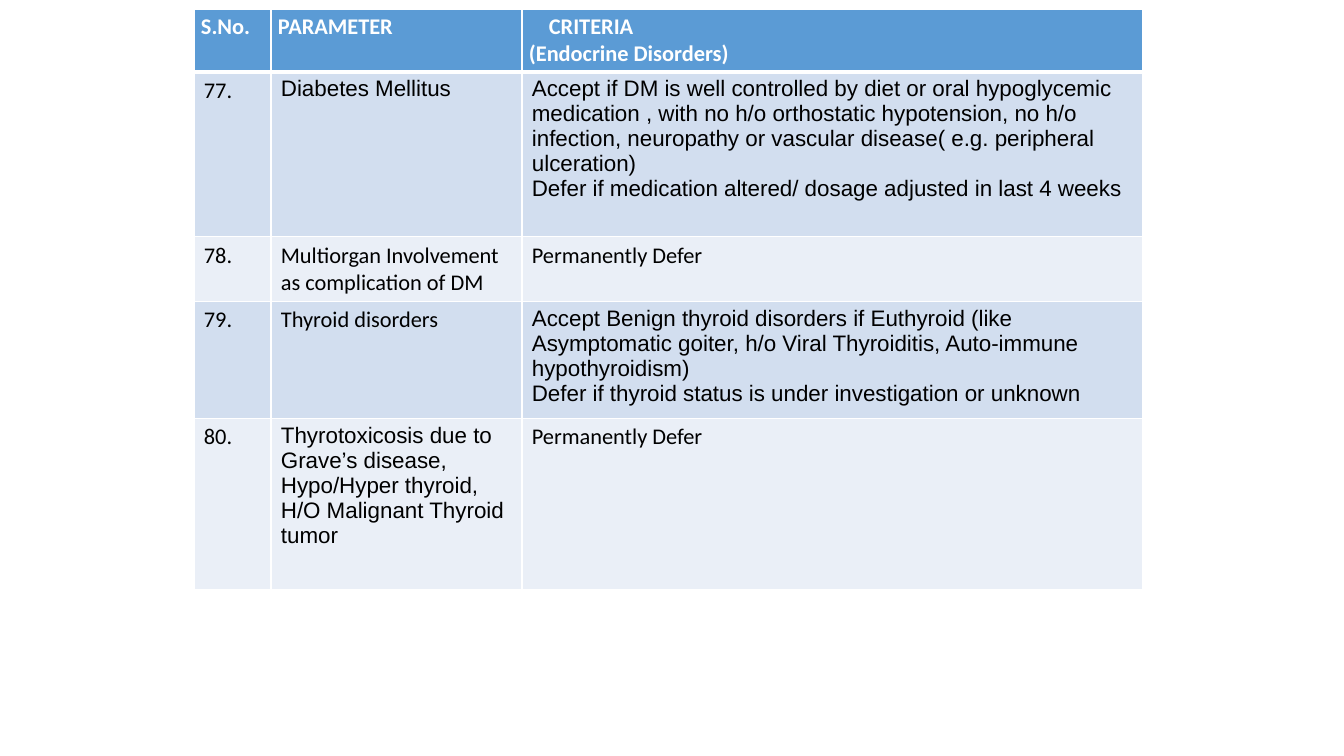
from dataclasses import dataclass

from lxml import etree
from pptx import Presentation
from pptx.dml.color import RGBColor
from pptx.enum.text import MSO_ANCHOR
from pptx.oxml.ns import qn
from pptx.table import _Cell
from pptx.util import Emu, Pt

TOP = MSO_ANCHOR.TOP
SCALE = 914400 / 100.8
WHITE, BLACK = "FFFFFF", "000000"
HEAD, DARK, LIGHT = "5B9BD5", "D2DEEF", "EAEFF7"
COLS = [77, 251, 621]


@dataclass
class Entry:
    text: str
    face: str = "Calibri"
    indent: int = 0  # first paragraph only


@dataclass
class Row:
    height: int
    fill: str
    cells: list[Entry]


@dataclass
class Style:
    ink: str
    bold: bool
    side: int
    edge: int
    base: int  # bottom border, points


TITLE = Style(WHITE, True, 7, 4, 3)
BODY = Style(BLACK, False, 10, 5, 1)

ROWS = [
    Row(60, HEAD, [
        Entry("S.No."),
        Entry("PARAMETER"),
        Entry("CRITERIA\n(Endocrine Disorders)", indent=20),
    ]),
    Row(165, DARK, [
        Entry("77."),
        Entry("Diabetes Mellitus", "Arial"),
        Entry("Accept if DM is well controlled by diet or oral hypoglycemic "
              "medication , with no h/o orthostatic hypotension, no h/o "
              "infection, neuropathy or vascular disease( e.g. peripheral "
              "ulceration)\n"
              "Defer if medication altered/ dosage adjusted in last 4 weeks",
              "Arial"),
    ]),
    Row(64, LIGHT, [
        Entry("78."),
        Entry("Multiorgan Involvement as complication of DM"),
        Entry("Permanently Defer"),
    ]),
    Row(117, DARK, [
        Entry("79."),
        Entry("Thyroid disorders"),
        Entry("Accept Benign thyroid disorders if Euthyroid (like "
              "Asymptomatic goiter, h/o Viral Thyroiditis, Auto-immune "
              "hypothyroidism)\n"
              "Defer if thyroid status is under investigation or unknown",
              "Arial"),
    ]),
    Row(171, LIGHT, [
        Entry("80."),
        Entry("Thyrotoxicosis due to Grave’s disease, Hypo/Hyper thyroid, "
              "H/O Malignant Thyroid tumor", "Arial"),
        Entry("Permanently Defer"),
    ]),
]


def px(count: int) -> Emu:
    return Emu(round(count * SCALE))


def color(code: str) -> RGBColor:
    return RGBColor.from_string(code)


def border(cell: _Cell, base: int) -> None:
    props = cell._tc.get_or_add_tcPr()
    sides = {"lnL": 1, "lnR": 1, "lnT": 1, "lnB": base}
    for place, (tag, width) in enumerate(sides.items()):
        line = etree.Element(qn(f"a:{tag}"), w=str(Pt(width)))
        paint = etree.SubElement(line, qn("a:solidFill"))
        etree.SubElement(paint, qn("a:srgbClr"), val=WHITE)
        props.insert(place, line)


def write(cell: _Cell, entry: Entry, fill: str, style: Style) -> None:
    # Cell box
    cell.fill.solid()
    cell.fill.fore_color.rgb = color(fill)
    box = {
        "margin_left": px(style.side), "margin_right": px(style.side),
        "margin_top": px(style.edge), "margin_bottom": px(style.edge),
        "vertical_anchor": TOP,
    }
    for name, value in box.items():
        setattr(cell, name, value)
    border(cell, style.base)

    # Cell text
    cell.text_frame.text = entry.text
    paras = cell.text_frame.paragraphs
    if entry.indent:
        paras[0]._p.get_or_add_pPr().set("marL", str(px(entry.indent)))
    look = {"name": entry.face, "size": Pt(16), "bold": style.bold}
    for para in paras:
        for run in para.runs:
            for name, value in look.items():
                setattr(run.font, name, value)
            run.font.color.rgb = color(style.ink)


def main() -> None:
    deck = Presentation()
    deck.slide_width, deck.slide_height = px(1344), px(756)
    slide = deck.slides.add_slide(deck.slide_layouts[6])

    # Criteria table
    high = sum(row.height for row in ROWS)
    frame = slide.shapes.add_table(len(ROWS), len(COLS), px(194), px(9),
                                   px(sum(COLS)), px(high))
    table = frame.table
    table.horz_banding = False
    for col, width in zip(table.columns, COLS):
        col.width = px(width)
    for index, row in enumerate(ROWS):
        table.rows[index].height = px(row.height)
        style = BODY if index else TITLE
        for place, entry in enumerate(row.cells):
            write(table.cell(index, place), entry, row.fill, style)

    deck.save("out.pptx")


if __name__ == "__main__":
    main()
